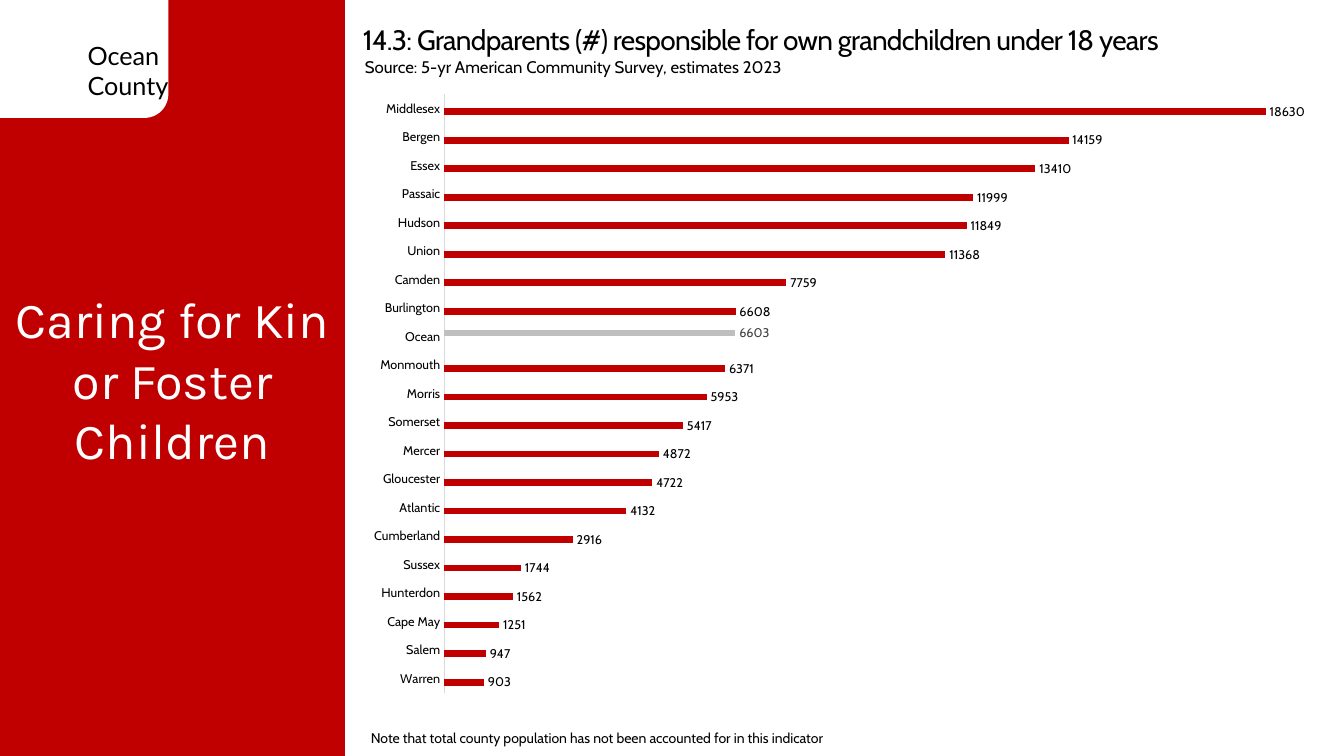
from pptx import Presentation
from pptx.chart.data import CategoryChartData
from pptx.dml.color import RGBColor
from pptx.enum.chart import XL_CHART_TYPE as ChartType, XL_LABEL_POSITION as LabelPos, XL_TICK_MARK as Tick
from pptx.enum.shapes import MSO_SHAPE as Preset
from pptx.enum.text import MSO_ANCHOR as Anchor, PP_ALIGN as Align
from pptx.oxml import parse_xml
from pptx.oxml.ns import nsdecls
from pptx.util import Inches, Pt

RED, WHITE, BLACK, GREY = "C00000", "FFFFFF", "000000", "BFBFBF"
HIGHLIGHT = "Ocean"
GRANDPARENTS = {
    "Warren": 903, "Salem": 947, "Cape May": 1251, "Hunterdon": 1562,
    "Sussex": 1744, "Cumberland": 2916, "Atlantic": 4132, "Gloucester": 4722,
    "Mercer": 4872, "Somerset": 5417, "Morris": 5953, "Monmouth": 6371,
    "Ocean": 6603, "Burlington": 6608, "Camden": 7759, "Union": 11368,
    "Hudson": 11849, "Passaic": 11999, "Essex": 13410, "Bergen": 14159,
    "Middlesex": 18630,
}


def rgb(value):
    return RGBColor.from_string(value)


def style_font(font, name, size, color):
    for key, value in {"name": name, "size": Pt(size), "bold": False}.items():
        setattr(font, key, value)
    font.color.rgb = rgb(color)


def fill_text(holder, lines, name, size, color, align=Align.LEFT, anchor=Anchor.TOP, right=0.1):
    frame = holder.text_frame
    frame.text = "\n".join(lines)
    layout = {"word_wrap": True, "vertical_anchor": anchor,
              "margin_left": Inches(0.1), "margin_right": Inches(right),
              "margin_top": Inches(0.05), "margin_bottom": Inches(0.05)}
    for key, value in layout.items():
        setattr(frame, key, value)
    for paragraph in frame.paragraphs:
        paragraph.alignment = align
        paragraph.line_spacing = 1.0
        for run in paragraph.runs:
            style_font(run.font, name, size, color)


def add_text(slide, box, lines, *style, **layout):
    fill_text(slide.shapes.add_textbox(*map(Inches, box)), lines, *style, **layout)


def add_block(slide, preset, box, color):
    block = slide.shapes.add_shape(preset, *map(Inches, box))
    block.shadow.inherit = False
    block.fill.solid()
    block.fill.fore_color.rgb = rgb(color)
    block.line.fill.background()


def add_side_panel(slide, left, top, width, height):
    add_block(slide, Preset.RECTANGLE, (left, top, width, height), RED)
    add_block(slide, Preset.ROUNDED_RECTANGLE, (left - 0.33, top - 0.25, 2, 1.42), WHITE)
    add_text(slide, (left + 0.77, top + 0.35, 1, 0.71), ["Ocean", "County"],
             "Lato", 18, BLACK, right=0)
    add_text(slide, (left, top + 2.8, width, 1.92), ["Caring for Kin or Foster Children"],
             "Karla", 36, WHITE, align=Align.CENTER, anchor=Anchor.MIDDLE)


def add_heading(slide, left, top):
    title = slide.shapes.title
    box = {"left": left, "top": top, "width": 10.25, "height": 0.44}
    for key, value in box.items():
        setattr(title, key, Inches(value))
    fill_text(title, ["14.3: Grandparents (#) responsible for own grandchildren under 18 years"],
              "Cabin", 20, BLACK, anchor=Anchor.MIDDLE)
    title.text_frame.paragraphs[0].runs[0].font._element.set("spc", "-50")
    add_text(slide, (left + 0.02, top + 0.34, 7.05, 0.3),
             ["Source: 5-yr American Community Survey, estimates 2023"], "Cabin", 12, BLACK)


def fix_plot_area(chart, **fractions):
    modes = "".join(f'<c:{key}Mode val="edge"/>' for key in "xy")
    sizes = "".join(f'<c:{key} val="{value}"/>' for key, value in fractions.items())
    plot_area = chart._chartSpace.chart.plotArea
    for old in plot_area.findall("{*}layout"):
        plot_area.remove(old)
    plot_area.insert(0, parse_xml(
        f'<c:layout {nsdecls("c")}><c:manualLayout><c:layoutTarget val="inner"/>'
        f'{modes}{sizes}</c:manualLayout></c:layout>'))


def add_county_chart(slide, left, top, width, height):
    data = CategoryChartData()
    data.categories = list(GRANDPARENTS)
    data.add_series("Series 1", [None if county == HIGHLIGHT else count
                                 for county, count in GRANDPARENTS.items()])
    data.add_series("Series 2", [count if county == HIGHLIGHT else None
                                 for county, count in GRANDPARENTS.items()])
    chart = slide.shapes.add_chart(ChartType.BAR_CLUSTERED,
                                   *map(Inches, (left, top, width, height)), data).chart
    chart.has_legend = chart.has_title = False
    style_font(chart.font, "Calibri", 10, BLACK)

    counties, counts = chart.category_axis, chart.value_axis
    counties.major_tick_mark = counties.minor_tick_mark = Tick.NONE
    style_font(counties.tick_labels.font, "Cabin", 9, BLACK)
    counties.format.line.color.rgb = rgb("D9D9D9")
    counties.format.line.width = Pt(0.75)
    for key, value in {"visible": False, "has_major_gridlines": False,
                       "minimum_scale": 0, "maximum_scale": 20000}.items():
        setattr(counts, key, value)

    plot = chart.plots[0]
    for key, value in {"gap_width": 219, "overlap": 0, "vary_by_categories": False}.items():
        setattr(plot, key, value)
    for series, color, label_color in zip(plot.series, (RED, GREY), (BLACK, "404040")):
        series.format.fill.solid()
        series.format.fill.fore_color.rgb = rgb(color)
        series.invert_if_negative = False
        labels = series.data_labels
        labels.show_value = True
        labels.position = LabelPos.OUTSIDE_END
        style_font(labels.font, "Cabin", 9, label_color)
    fix_plot_area(chart, x=0.09, y=0.02, w=0.89, h=0.96)


def main():
    deck = Presentation()
    deck.slide_width, deck.slide_height = Inches(13.33), Inches(7.5)
    slide = deck.slides.add_slide(deck.slide_layouts[5])
    add_side_panel(slide, 0, 0, 3.42, 7.5)
    add_heading(slide, 3.5, 0.17)
    add_county_chart(slide, 3.52, 0.81, 9.83, 6.19)
    add_text(slide, (3.58, 7.19, 9.33, 0.27),
             ["Note that total county population has not been accounted for in this indicator"],
             "Cabin", 10, BLACK)
    deck.save("out.pptx")


if __name__ == "__main__":
    main()
